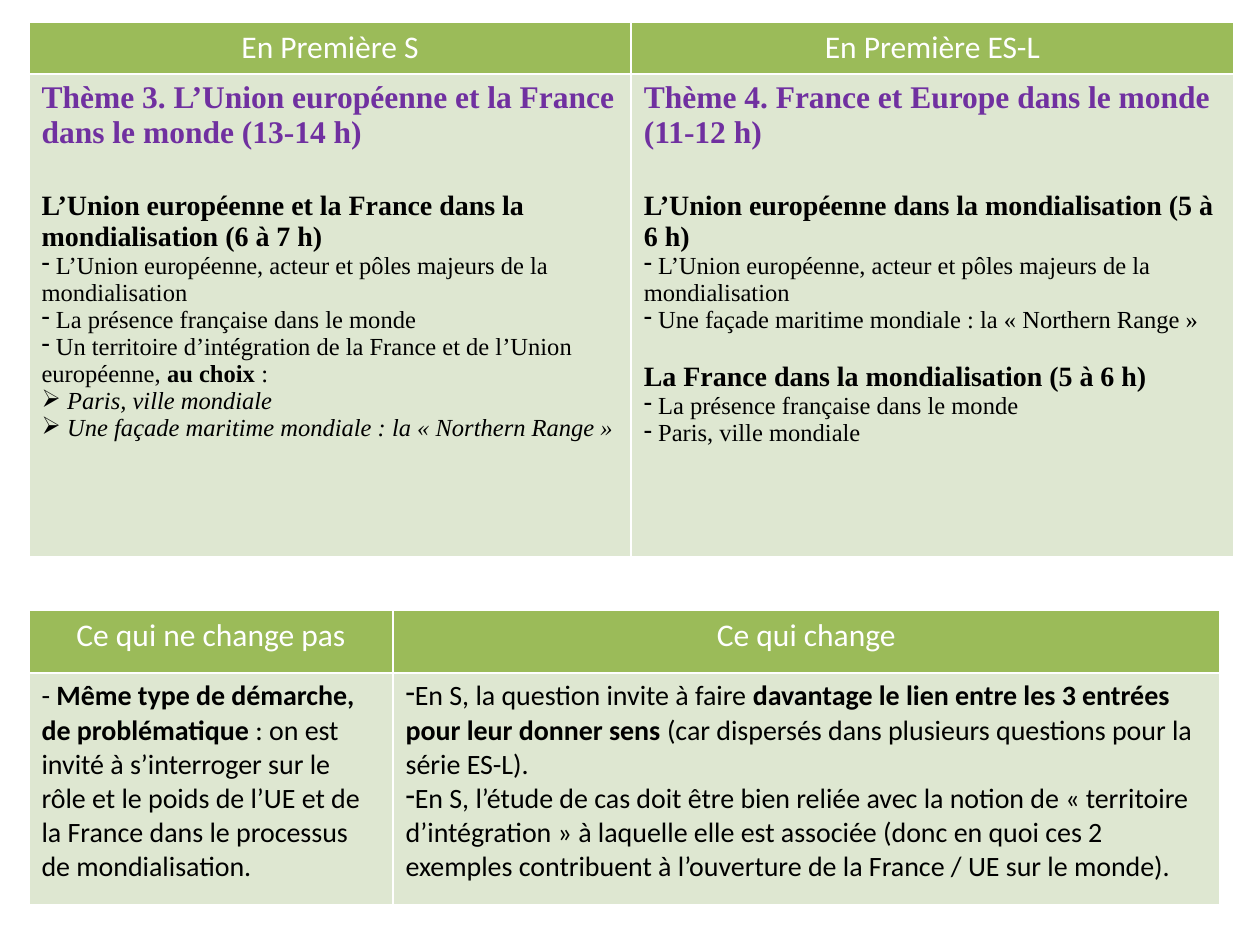
from lxml import etree
from pptx import Presentation
from pptx.dml.color import RGBColor
from pptx.enum.text import PP_ALIGN
from pptx.oxml.ns import qn
from pptx.util import Inches, Pt

CENTER, LEFT = PP_ALIGN.CENTER, PP_ALIGN.LEFT
WHITE = RGBColor(0xFF, 0xFF, 0xFF)
BLACK = RGBColor(0, 0, 0)
PURPLE = RGBColor(0x70, 0x30, 0xA0)
GREEN = RGBColor(0x9B, 0xBB, 0x59)
PALE_GREEN = RGBColor(0xDE, 0xE7, 0xD1)
SANS, SERIF = "Calibri", "Times New Roman"

STYLES = {
    "header": {"name": SANS, "size": Pt(18), "bold": False, "color": WHITE},
    "theme": {"name": SERIF, "size": Pt(18), "bold": True, "color": PURPLE},
    "question": {"name": SERIF, "size": Pt(16), "bold": True, "color": BLACK},
    "item": {"name": SERIF, "size": Pt(14), "bold": False, "color": BLACK},
    "example": {"name": SERIF, "size": Pt(14), "bold": False, "italic": True, "color": BLACK},
    "comment": {"name": SANS, "size": Pt(16), "bold": False, "color": BLACK},
}


def line(style, *parts, bullet=None, before=0):
    return {"style": style, "parts": parts, "bullet": bullet, "before": before}


def item(*parts):
    return line("item", *parts, bullet="-")


def example(text):
    return line("example", text, bullet="➢")


class SlideBuilder:
    def __init__(self, slide):
        self.slide = slide

    def add_run(self, paragraph, text, style, **changes):
        run = paragraph.add_run()
        run.text = text
        for name, value in {**STYLES[style], **changes}.items():
            if name == "color":
                run.font.color.rgb = value
            else:
                setattr(run.font, name, value)

    def write_paragraph(self, paragraph, content, alignment):
        paragraph.alignment = alignment
        paragraph.space_before = Pt(content["before"])
        if content["bullet"]:
            properties = paragraph._p.get_or_add_pPr()
            etree.SubElement(properties, qn("a:buChar"), char=content["bullet"])
        for part in content["parts"]:
            if isinstance(part, tuple):
                self.add_run(paragraph, part[0], content["style"], bold=True)
            else:
                self.add_run(paragraph, part, content["style"])

    def fill_cell(self, cell, lines, color, alignment):
        cell.fill.solid()
        cell.fill.fore_color.rgb = color
        frame = cell.text_frame
        for index, content in enumerate(lines):
            paragraph = frame.add_paragraph() if index else frame.paragraphs[0]
            self.write_paragraph(paragraph, content, alignment)

    def add_table(self, left, top, widths, heights, headers, bodies):
        frame = self.slide.shapes.add_table(
            2, len(widths), Inches(left), Inches(top), Inches(sum(widths)), Inches(sum(heights)))
        table = frame.table
        table.horz_banding = False
        for row, height in zip(table.rows, heights):
            row.height = Inches(height)
        for index, width in enumerate(widths):
            table.columns[index].width = Inches(width)
            self.fill_cell(table.cell(0, index), [line("header", headers[index])], GREEN, CENTER)
            self.fill_cell(table.cell(1, index), bodies[index], PALE_GREEN, LEFT)


def main():
    presentation = Presentation()
    presentation.slide_width, presentation.slide_height = Inches(10), Inches(7.5)
    slide = presentation.slides.add_slide(presentation.slide_layouts[6])
    builder = SlideBuilder(slide)

    science_programme = [
        line("theme", "Thème 3. L’Union européenne et la France dans le monde (13-14 h)"),
        line("question", "L’Union européenne et la France dans la mondialisation (6 à 7 h)", before=23),
        item(" L’Union européenne, acteur et pôles majeurs de la mondialisation"),
        item(" La présence française dans le monde"),
        item(" Un territoire d’intégration de la France et de l’Union européenne, ",
             ("au choix ",), ":"),
        example(" Paris, ville mondiale"),
        example(" Une façade maritime mondiale : la « Northern Range »"),
    ]
    humanities_programme = [
        line("theme", "Thème 4. France et Europe dans le monde (11-12 h)"),
        line("question", "L’Union européenne dans la mondialisation (5 à 6 h)", before=23),
        item(" L’Union européenne, acteur et pôles majeurs de la mondialisation"),
        item(" Une façade maritime mondiale : la « Northern Range »"),
        line("question", "La France dans la mondialisation (5 à 6 h)", before=16),
        item(" La présence française dans le monde"),
        item(" Paris, ville mondiale"),
    ]
    builder.add_table(0.23, 0.18, [4.78, 4.78], [0.4, 3.83],
                      ["En Première S", "En Première ES-L"],
                      [science_programme, humanities_programme])

    unchanged = [
        line("comment", "- ", ("Même type de démarche, de problématique ",),
             ": on est invité à s’interroger sur le rôle et le poids de l’UE et de la France "
             "dans le processus de mondialisation."),
    ]
    changed = [
        line("comment", "En S, la question invite à faire ",
             ("davantage le lien entre les 3 entrées pour leur donner sens ",),
             "(car dispersés dans plusieurs questions pour la série ES-L).", bullet="-"),
        line("comment", "En S, l’étude de cas doit être bien reliée avec la notion de "
             "« territoire d’intégration » à laquelle elle est associée (donc en quoi ces 2 "
             "exemples contribuent à l’ouverture de la France / UE sur le monde).", bullet="-"),
    ]
    builder.add_table(0.23, 4.84, [2.89, 6.56], [0.5, 1.84],
                      ["Ce qui ne change pas", "Ce qui change"], [unchanged, changed])

    presentation.save("out.pptx")


if __name__ == "__main__":
    main()
